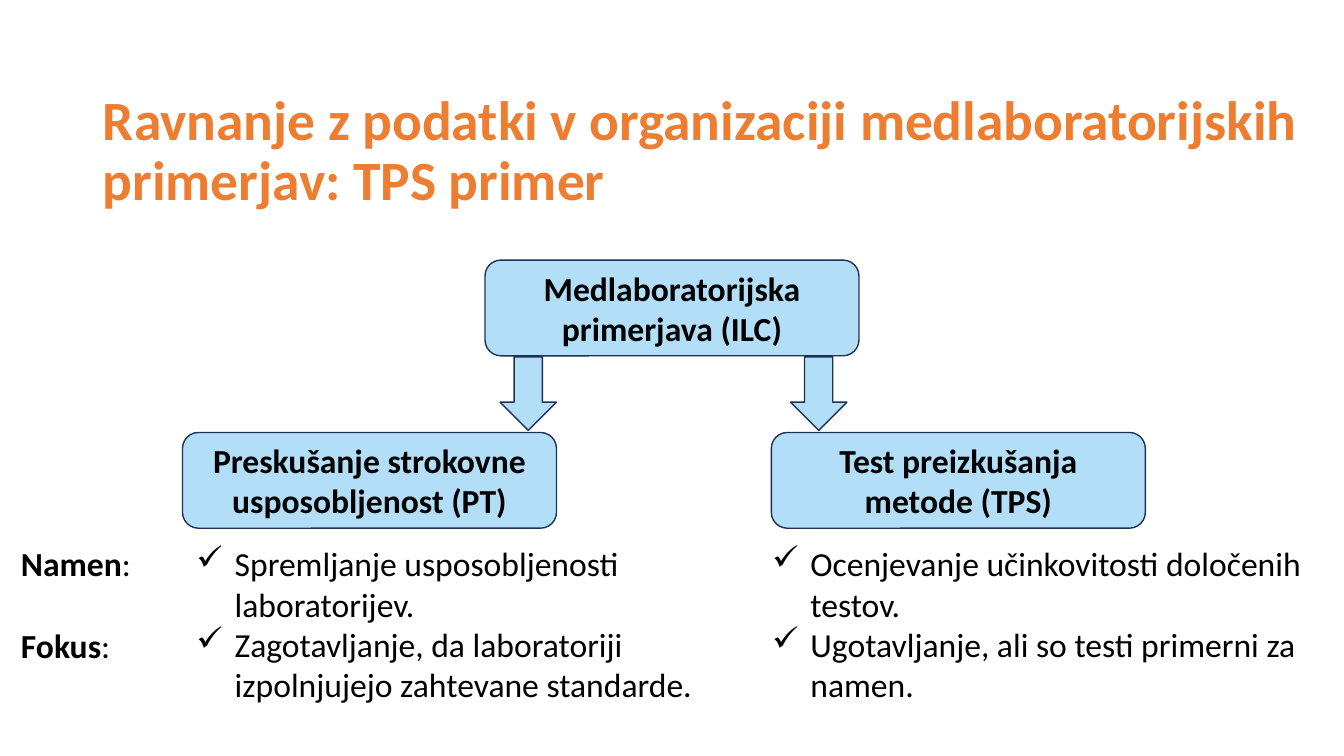
"""Build the slide on data handling in interlaboratory comparisons."""
import pptx
import pptx.dml.color
import pptx.enum.shapes
import pptx.enum.text
import pptx.oxml.ns
import pptx.util
from lxml import etree

Inches = pptx.util.Inches
Pt = pptx.util.Pt
RGBColor = pptx.dml.color.RGBColor
MSO_SHAPE = pptx.enum.shapes.MSO_SHAPE
PP_ALIGN = pptx.enum.text.PP_ALIGN
MSO_ANCHOR = pptx.enum.text.MSO_ANCHOR
MSO_AUTO_SIZE = pptx.enum.text.MSO_AUTO_SIZE
qn = pptx.oxml.ns.qn

ORANGE = RGBColor(0xED, 0x7D, 0x31)
LIGHT_BLUE = RGBColor(0xB3, 0xDE, 0xF7)
NAVY = RGBColor(0x1E, 0x32, 0x56)
BLACK = RGBColor(0, 0, 0)

BODY = {"name": "Calibri", "size": Pt(24), "bold": False}
BOLD = {**BODY, "bold": True}
TITLE = {**BOLD, "size": Pt(39.6)}

BOX_SIZE = (3.71, 0.95)
ARROW_SIZE = (0.56, 0.73)
ARROW_TOP = 3.54
TEXT_TOP = 5.34
BULLET_INDENT = Inches(0.38)

BOXES = [
    (4.81, 2.58, "Medlaboratorijska primerjava (ILC)"),
    (1.81, 4.29, "Preskušanje strokovne usposobljenost (PT)"),
    (7.65, 4.29, "Test preizkušanja metode (TPS)"),
]
ARROW_LEFTS = [4.96, 7.84]
CHECKLISTS = [
    (1.85, 5.17, ["Spremljanje usposobljenosti laboratorijev.",
                  "Zagotavljanje, da laboratoriji izpolnjujejo zahtevane standarde."]),
    (7.56, 5.56, ["Ocenjevanje učinkovitosti določenih testov.",
                  "Ugotavljanje, ali so testi primerni za namen."]),
]


def add_run(p, text, fmt, color=BLACK):
    """Append a formatted run to a paragraph."""
    r = p.add_run()
    r.text = text
    for key, value in fmt.items():
        setattr(r.font, key, value)
    r.font.color.rgb = color


def add_title(slide, text):
    """Place and format the title placeholder."""
    sp = slide.shapes.title
    place = {"left": 0.92, "top": 1.18, "width": 12.2, "height": 0.67}
    for key, value in place.items():
        setattr(sp, key, Inches(value))
    tf = sp.text_frame
    tf.word_wrap = True
    tf.auto_size = MSO_AUTO_SIZE.NONE
    tf.vertical_anchor = MSO_ANCHOR.MIDDLE
    p = tf.paragraphs[0]
    p.alignment = PP_ALIGN.LEFT
    p.line_spacing = 0.9
    add_run(p, text, TITLE, ORANGE)


def add_block(slide, kind, left, top, size):
    """Add a light blue preset shape with a navy outline."""
    sp = slide.shapes.add_shape(kind, *map(Inches, (left, top, *size)))
    sp.shadow.inherit = False
    sp.fill.solid()
    sp.fill.fore_color.rgb = LIGHT_BLUE
    sp.line.color.rgb = NAVY
    sp.line.width = Pt(1)
    return sp


def add_box(slide, left, top, text):
    """Add a rounded box with a centred bold label."""
    sp = add_block(slide, MSO_SHAPE.ROUNDED_RECTANGLE, left, top, BOX_SIZE)
    tf = sp.text_frame
    tf.word_wrap = True
    tf.vertical_anchor = MSO_ANCHOR.MIDDLE
    p = tf.paragraphs[0]
    p.alignment = PP_ALIGN.CENTER
    add_run(p, text, BOLD)


def add_paragraphs(slide, left, width, height, count):
    """Add a wrapping text box and return its empty paragraphs."""
    sp = slide.shapes.add_textbox(*map(Inches, (left, TEXT_TOP, width, height)))
    tf = sp.text_frame
    tf.word_wrap = True
    tf.auto_size = MSO_AUTO_SIZE.SHAPE_TO_FIT_TEXT
    for _ in range(count - 1):
        tf.add_paragraph()
    return tf.paragraphs


def add_checklist(slide, left, width, items):
    """Add a list with check mark bullets."""
    for p, item in zip(add_paragraphs(slide, left, width, 1.72, len(items)), items):
        pPr = p._p.get_or_add_pPr()
        pPr.set("marL", str(BULLET_INDENT))
        pPr.set("indent", str(-BULLET_INDENT))
        etree.SubElement(pPr, qn("a:buChar")).set("char", "✓")
        add_run(p, item, BODY)


def add_row_labels(slide, labels):
    """Add the row labels, one text line apart."""
    for i, p in enumerate(add_paragraphs(slide, 0.11, 1.87, 1.31, len(labels))):
        if i:
            p.space_before = Pt(29.3)
        add_run(p, labels[i], BOLD)
        add_run(p, ":", BODY)


def main():
    """Build and save the slide."""
    prs = pptx.Presentation()
    prs.slide_width, prs.slide_height = Inches(13.33), Inches(7.5)
    slide = prs.slides.add_slide(prs.slide_layouts[5])
    add_title(slide, "Ravnanje z podatki v organizaciji medlaboratorijskih primerjav: TPS primer")
    for left, top, text in BOXES:
        add_box(slide, left, top, text)
    for left in ARROW_LEFTS:
        add_block(slide, MSO_SHAPE.DOWN_ARROW, left, ARROW_TOP, ARROW_SIZE)
    add_row_labels(slide, ["Namen", "Fokus"])
    for left, width, items in CHECKLISTS:
        add_checklist(slide, left, width, items)
    prs.save("out.pptx")


if __name__ == "__main__":
    main()
